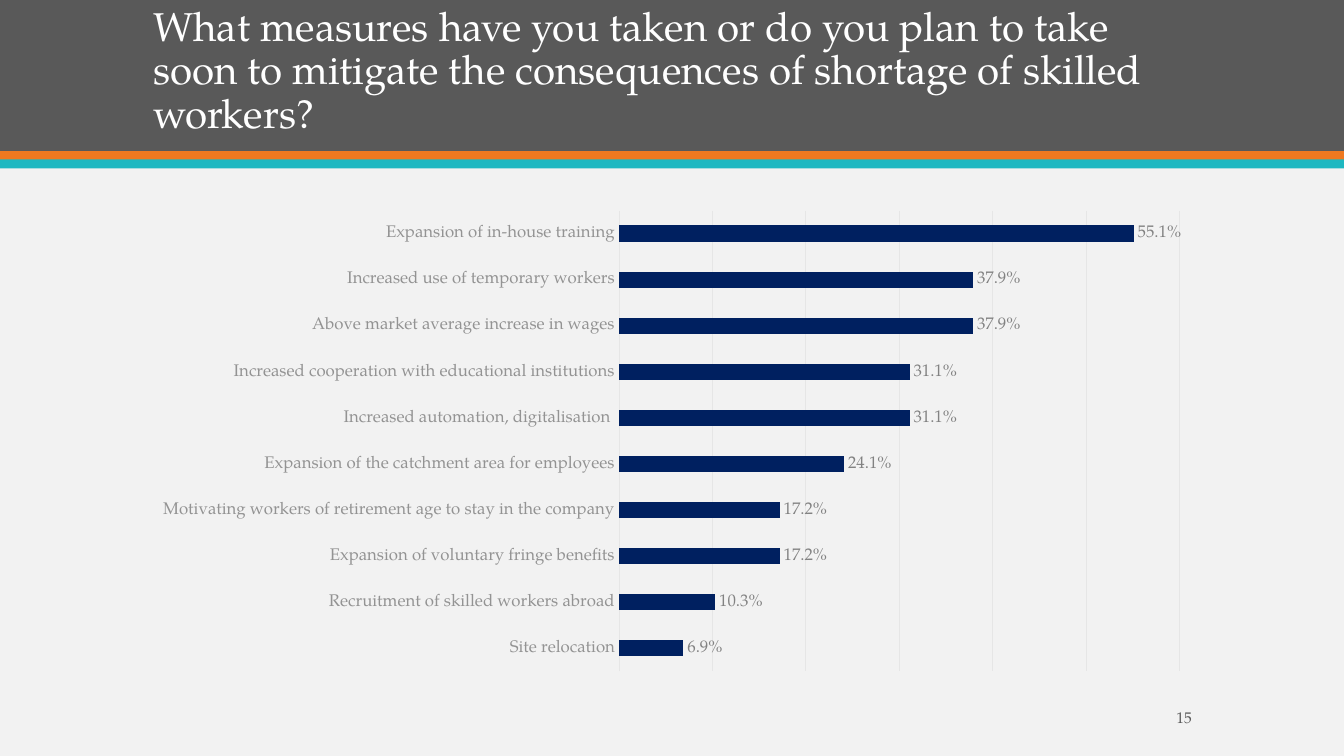
"""Build the slide on measures against the shortage of skilled workers."""
from dataclasses import dataclass

import pptx
import pptx.chart.data
import pptx.chart.chart
import pptx.dml.color
import pptx.enum.chart
import pptx.enum.shapes
import pptx.enum.text
import pptx.oxml
import pptx.oxml.ns
import pptx.slide
import pptx.text.text
import pptx.util

Inches = pptx.util.Inches
RGBColor = pptx.dml.color.RGBColor


@dataclass(frozen=True)
class Theme:
    font: str = "TeX Gyre Pagella"
    background: str = "F2F2F2"
    header: str = "595959"
    orange: str = "EF7920"
    teal: str = "1EB8C1"
    title: str = "FFFFFF"
    bar: str = "002060"
    grid: str = "E6E6E6"
    category: str = "939393"
    value: str = "828282"
    number: str = "595959"
    title_size: float = 28.8
    label_size: float = 12
    chart_size: float = 10
    number_size: float = 11
    line_width: float = 0.75


@dataclass(frozen=True)
class Box:
    left: float
    top: float
    width: float
    height: float

    def lengths(self) -> tuple[int, int, int, int]:
        return Inches(self.left), Inches(self.top), Inches(self.width), Inches(self.height)


@dataclass(frozen=True)
class Band:
    box: Box
    color: str


@dataclass(frozen=True)
class Label:
    text: str
    box: Box
    size: float
    color: str
    anchor: pptx.enum.text.MSO_ANCHOR
    alignment: pptx.enum.text.PP_ALIGN
    line_spacing: float = 1.0


@dataclass(frozen=True)
class Measure:
    name: str
    percent: float


THEME = Theme()
SLIDE_WIDTH, SLIDE_HEIGHT = 13.33, 7.5
CHART_BOX = Box(1.42, 2, 10.5, 4.75)
PLOT_BOX = Box(6.14, 2.09, 5.56, 4.57)

BANDS = (
    Band(Box(0, 0, SLIDE_WIDTH, 1.5), THEME.header),
    Band(Box(0, 1.5, SLIDE_WIDTH, 0.09), THEME.orange),
    Band(Box(0, 1.58, SLIDE_WIDTH, 0.09), THEME.teal),
)
LABELS = (
    Label(
        "What measures have you taken or do you plan to take soon to mitigate "
        "the consequences of shortage of skilled workers?",
        Box(1.42, 0.28, 10.5, 1.13), THEME.title_size, THEME.title,
        pptx.enum.text.MSO_ANCHOR.BOTTOM, pptx.enum.text.PP_ALIGN.LEFT, 0.9,
    ),
    Label(
        "15", Box(10.42, 6.97, 1.5, 0.3), THEME.number_size, THEME.number,
        pptx.enum.text.MSO_ANCHOR.MIDDLE, pptx.enum.text.PP_ALIGN.RIGHT,
    ),
)
MEASURES = (
    Measure("Site relocation", 6.9),
    Measure("Recruitment of skilled workers abroad", 10.3),
    Measure("Expansion of voluntary fringe benefits", 17.2),
    Measure("Motivating workers of retirement age to stay in the company", 17.2),
    Measure("Expansion of the catchment area for employees", 24.1),
    Measure("Increased automation, digitalisation ", 31.1),
    Measure("Increased cooperation with educational institutions", 31.1),
    Measure("Above market average increase in wages", 37.9),
    Measure("Increased use of temporary workers", 37.9),
    Measure("Expansion of in-house training", 55.1),
)


def set_font(font: pptx.text.text.Font, size: float, color: str) -> None:
    font.name = THEME.font
    font.size = pptx.util.Pt(size)
    font.color.rgb = RGBColor.from_string(color)


def draw_band(slide: pptx.slide.Slide, band: Band) -> None:
    shape = slide.shapes.add_shape(
        pptx.enum.shapes.MSO_SHAPE.RECTANGLE, *band.box.lengths()
    )
    shape.shadow.inherit = False
    shape.fill.solid()
    shape.fill.fore_color.rgb = RGBColor.from_string(band.color)
    shape.line.fill.background()


def draw_label(slide: pptx.slide.Slide, label: Label) -> None:
    frame = slide.shapes.add_textbox(*label.box.lengths()).text_frame
    frame.word_wrap = True
    frame.vertical_anchor = label.anchor
    paragraph = frame.paragraphs[0]
    paragraph.text = label.text
    paragraph.alignment = label.alignment
    paragraph.line_spacing = label.line_spacing
    set_font(paragraph.font, label.size, label.color)


def place_plot(chart: pptx.chart.chart.Chart, plot: Box, frame: Box) -> None:
    fractions = {
        "x": (plot.left - frame.left) / frame.width,
        "y": (plot.top - frame.top) / frame.height,
        "w": plot.width / frame.width,
        "h": plot.height / frame.height,
    }
    modes = "".join(f'<c:{key}Mode val="edge"/>' for key in "xy")
    sizes = "".join(f'<c:{key} val="{part:.4f}"/>' for key, part in fractions.items())
    layout = pptx.oxml.parse_xml(
        f'<c:layout {pptx.oxml.ns.nsdecls("c")}><c:manualLayout>'
        f'<c:layoutTarget val="inner"/>{modes}{sizes}</c:manualLayout></c:layout>'
    )
    plot_area = chart.plots[0]._element.getparent()
    for previous in plot_area.findall(pptx.oxml.ns.qn("c:layout")):
        plot_area.remove(previous)
    plot_area.insert(0, layout)


def draw_chart(slide: pptx.slide.Slide, measures: tuple[Measure, ...]) -> None:
    data = pptx.chart.data.CategoryChartData(number_format='0.0"%"')
    data.categories = [measure.name for measure in measures]
    data.add_series("Series 1", [measure.percent for measure in measures])
    chart = slide.shapes.add_chart(
        pptx.enum.chart.XL_CHART_TYPE.BAR_CLUSTERED, *CHART_BOX.lengths(), data
    ).chart
    chart.has_legend = False
    chart.has_title = False
    set_font(chart.font, THEME.chart_size, THEME.number)

    category_axis, value_axis = chart.category_axis, chart.value_axis
    category_axis.major_tick_mark = pptx.enum.chart.XL_TICK_MARK.NONE
    set_font(category_axis.tick_labels.font, THEME.label_size, THEME.category)
    value_axis.visible = False
    value_axis.minimum_scale, value_axis.maximum_scale = 0, 60
    value_axis.major_unit = 10
    value_axis.has_major_gridlines = True
    for line in (category_axis.format.line, value_axis.major_gridlines.format.line):
        line.color.rgb = RGBColor.from_string(THEME.grid)
        line.width = pptx.util.Pt(THEME.line_width)

    plot = chart.plots[0]
    plot.gap_width = 182
    plot.vary_by_categories = False
    fill = plot.series[0].format.fill
    fill.solid()
    fill.fore_color.rgb = RGBColor.from_string(THEME.bar)
    plot.has_data_labels = True
    labels = plot.data_labels
    labels.show_value = True
    labels.position = pptx.enum.chart.XL_LABEL_POSITION.OUTSIDE_END
    set_font(labels.font, THEME.label_size, THEME.value)
    place_plot(chart, PLOT_BOX, CHART_BOX)


def main() -> None:
    presentation = pptx.Presentation()
    presentation.slide_width = Inches(SLIDE_WIDTH)
    presentation.slide_height = Inches(SLIDE_HEIGHT)
    slide = presentation.slides.add_slide(presentation.slide_layouts[6])
    slide.background.fill.solid()
    slide.background.fill.fore_color.rgb = RGBColor.from_string(THEME.background)
    for band in BANDS:
        draw_band(slide, band)
    for label in LABELS:
        draw_label(slide, label)
    draw_chart(slide, MEASURES)
    presentation.save("out.pptx")


if __name__ == "__main__":
    main()
